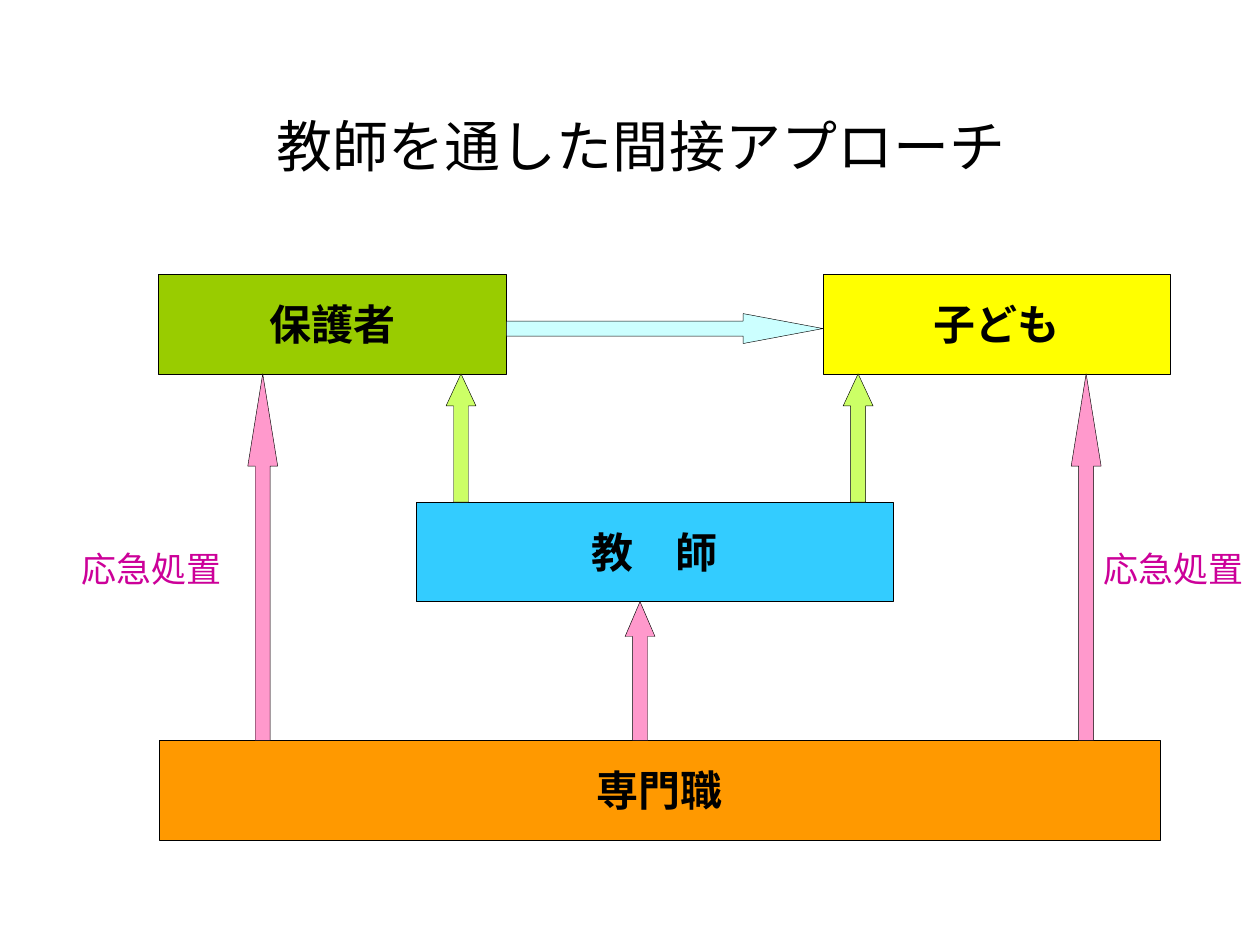
from dataclasses import dataclass

from pptx import Presentation
from pptx.dml.color import RGBColor
from pptx.enum.shapes import MSO_SHAPE
from pptx.enum.text import MSO_ANCHOR, PP_ALIGN
from pptx.util import Pt

PROCESS = MSO_SHAPE.FLOWCHART_PROCESS
UP, RIGHT = MSO_SHAPE.UP_ARROW, MSO_SHAPE.RIGHT_ARROW
MIDDLE, TOP = MSO_ANCHOR.MIDDLE, MSO_ANCHOR.TOP
CENTER, LEFT = PP_ALIGN.CENTER, PP_ALIGN.LEFT

BOX_H = 56.8
THICK = 17.1
ROW_1, ROW_2, ROW_3 = 156.8, 287, 423.1
PINK, LIME, AQUA = "FF99CC", "CCFF66", "CCFFFF"


@dataclass
class Box:
    text: str
    left: float
    top: float
    width: float
    fill: str


@dataclass
class Rise:
    """An upward arrow from the top of one row to the foot of another."""
    left: float
    low: float
    high: float
    head: float
    fill: str


@dataclass
class Label:
    text: str
    left: float
    top: float
    width: float
    height: float
    size: float
    font: str
    color: str
    align: PP_ALIGN
    anchor: MSO_ANCHOR


PARENT = Box("保護者", 90.7, ROW_1, 198.6, "99CC00")
CHILD = Box("子ども", 470.3, ROW_1, 198.6, "FFFF00")
TEACHER = Box("教　師", 238, ROW_2, 272.4, "33CCFF")
EXPERT = Box("専門職", 90.7, ROW_3, 572.4, "FF9900")
BOXES = [PARENT, EXPERT, TEACHER, CHILD]

RISES = [
    *(Rise(x, ROW_3, ROW_1, 3.085, PINK) for x in (141.6, 612.1)),
    Rise(357.2, ROW_3, ROW_2, 1.167, PINK),
    *(Rise(x, ROW_2, ROW_1, 1.075, LIME) for x in (254.9, 481.8)),
]

LABELS = [
    Label("教師を通した間接アプローチ", 42.5, 60.5, 648, 45.4,
          32, "Arial", "000000", CENTER, MIDDLE),
    *(Label("応急処置", x, 309.6, 96.4, 31,
            20, "Noto Sans CJK JP", "CC0099", LEFT, TOP)
      for x in (39.4, 623.6)),
]


def paint(hue: str) -> RGBColor:
    return RGBColor.from_string(hue)


def add_shape(slide, kind, left: float, top: float, width: float,
              height: float, fill: str):
    shape = slide.shapes.add_shape(
        kind, Pt(left), Pt(top), Pt(width), Pt(height))
    shape.shadow.inherit = False
    shape.fill.solid()
    shape.fill.fore_color.rgb = paint(fill)
    shape.line.color.rgb = paint("000000")
    shape.line.width = Pt(0.25)
    return shape


def write(frame, text: str, size: float, font: str, color: str,
          align: PP_ALIGN, anchor: MSO_ANCHOR, bold: bool = False) -> None:
    frame.vertical_anchor = anchor
    para = frame.paragraphs[0]
    para.text = text
    para.alignment = align
    para.font.size = Pt(size)
    para.font.name = font
    para.font.bold = bold
    para.font.color.rgb = paint(color)


def add_box(slide, box: Box) -> None:
    shape = add_shape(slide, PROCESS, box.left, box.top, box.width,
                      BOX_H, box.fill)
    frame = shape.text_frame
    frame.margin_left = frame.margin_right = Pt(2.9)
    frame.margin_top = frame.margin_bottom = Pt(2.9)
    frame.word_wrap = True
    write(frame, box.text, 24, "Times New Roman", "000000",
          CENTER, MIDDLE, bold=True)


def add_arrow(slide, kind, left: float, top: float, width: float,
              height: float, head: float, fill: str) -> None:
    arrow = add_shape(slide, kind, left, top, width, height, fill)
    arrow.adjustments[0] = 0.5
    arrow.adjustments[1] = head


def add_rise(slide, rise: Rise) -> None:
    foot = rise.high + BOX_H
    add_arrow(slide, UP, rise.left, foot, THICK, rise.low - foot,
              rise.head, rise.fill)


def add_label(slide, label: Label) -> None:
    shape = slide.shapes.add_textbox(
        Pt(label.left), Pt(label.top), Pt(label.width), Pt(label.height))
    shape.text_frame.word_wrap = True
    write(shape.text_frame, label.text, label.size, label.font,
          label.color, label.align, label.anchor)


def main() -> None:
    deck = Presentation()
    deck.slide_width, deck.slide_height = Pt(720), Pt(540)
    slide = deck.slides.add_slide(deck.slide_layouts[6])
    for box in BOXES:
        add_box(slide, box)
    for rise in RISES:
        add_rise(slide, rise)
    edge = PARENT.left + PARENT.width
    add_arrow(slide, RIGHT, edge, 179.2, CHILD.left - edge, THICK,
              2.667, AQUA)
    for label in LABELS:
        add_label(slide, label)
    deck.save("out.pptx")


if __name__ == "__main__":
    main()
